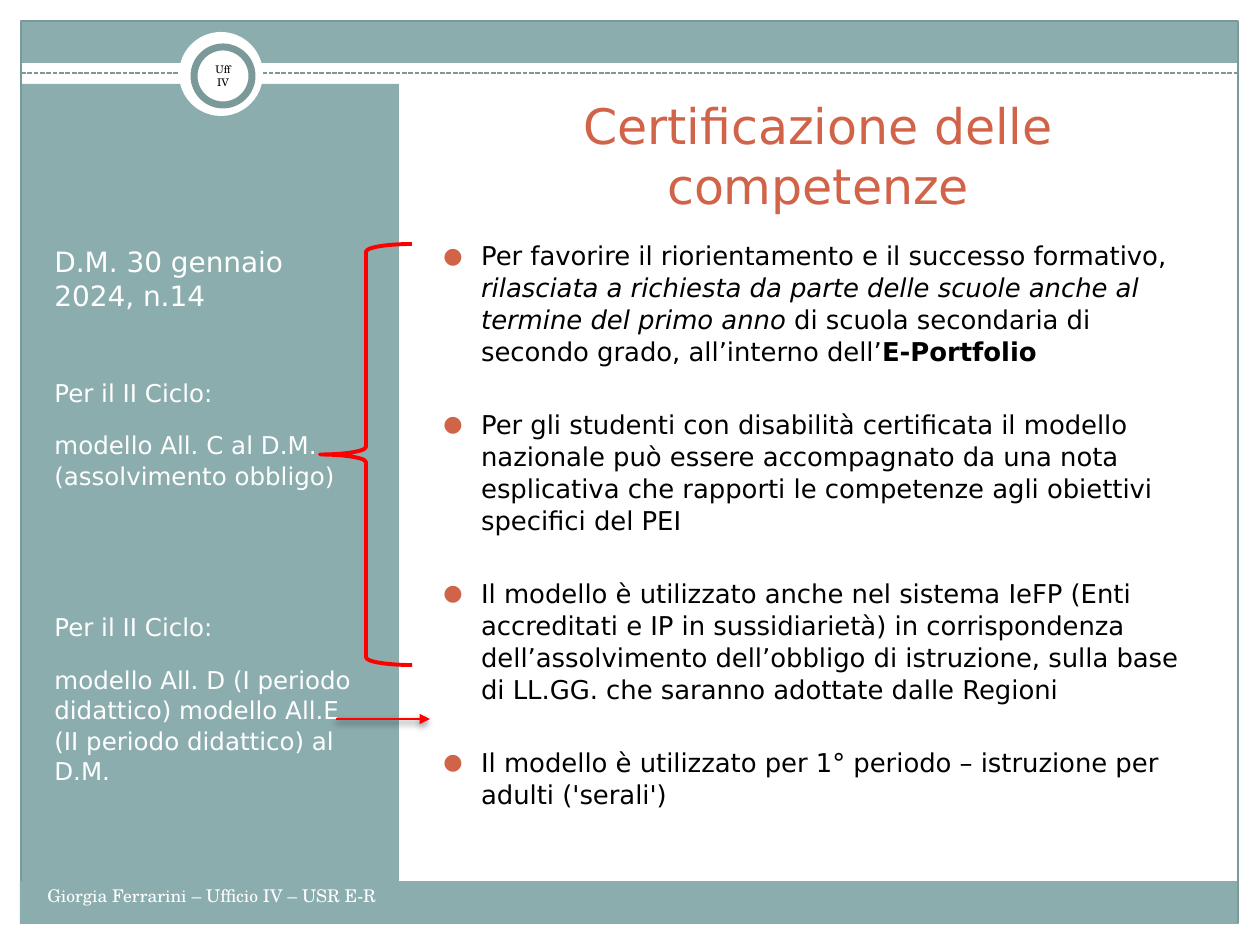
from dataclasses import dataclass

from lxml import etree
from pptx import Presentation
from pptx import util as u
from pptx.dml.color import RGBColor
from pptx.enum import dml, shapes, text
from pptx.oxml import ns


@dataclass(frozen=True)
class Theme:
    sage: str = "8CADAE"
    edge: str = "7C999A"
    rust: str = "D16349"
    red: str = "FF0000"
    white: str = "FFFFFF"
    black: str = "000000"
    sans: str = "DejaVu Sans"
    serif: str = "TeX Gyre Schola"
    title: float = 28
    lead: float = 16
    side: float = 14
    body: float = 14.8
    foot: float = 10
    badge: float = 6
    lines: float = 1.03


T = Theme()
PX = 914400 / 126
WIDE, HIGH = 1260, 945

TITLE = "Certificazione delle competenze"
BADGE = "Uff IV"
FOOT = "Giorgia Ferrarini – Ufficio IV – USR E-R"

# text, size, space before, space after
SIDE = [
    ("D.M. 30 gennaio 2024, n.14", T.lead, 0, 10),
    ("Per il II Ciclo:", T.side, 26.8, 10),
    ("modello All. C al D.M. (assolvimento obbligo)", T.side, 2.8, 10),
    ("Per il II Ciclo:", T.side, 59.5, 10),
    ("modello All. D (I periodo didattico) modello All.E "
     "(II periodo didattico) al D.M.", T.side, 2.8, 10),
]

# each point is a list of (text, style)
POINTS = [
    [("Per favorire il riorientamento e il successo formativo, ", ""),
     ("rilasciata a richiesta\u00a0da parte delle scuole\u00a0anche al "
      "termine del primo anno", "i"),
     (" di scuola secondaria di secondo grado, all’interno dell’", ""),
     ("E-Portfolio", "b")],
    [("Per gli studenti con disabilità certificata il modello nazionale può "
      "essere accompagnato da una nota esplicativa che rapporti\u00a0le "
      "competenze agli obiettivi specifici del PEI", "")],
    [("Il modello è utilizzato anche nel sistema IeFP (Enti accreditati "
      "e\u00a0IP in sussidiarietà) in corrispondenza dell’assolvimento "
      "dell’obbligo di istruzione, sulla base di LL.GG. che saranno adottate "
      "dalle Regioni", "")],
    [("Il modello è utilizzato\u00a0per 1° periodo – istruzione per adulti "
      "('serali')", "")],
]
GAP = 23.4

# box, fill
PANELS = [
    ((21, 21, 1217, 42), T.sage),
    ((0, 924, WIDE, 21), T.white),
    ((1239, 0, 21, HIGH), T.white),
    ((0, 0, WIDE, 16), T.white),
    ((0, 0, 21, HIGH), T.white),
    ((21, 84, 378, 809), T.sage),
]

prs = Presentation()
prs.slide_width, prs.slide_height = u.Inches(10), u.Inches(7.5)
slide = prs.slides.add_slide(prs.slide_layouts[6])
KIND = shapes.MSO_SHAPE


def px(*nums):
    return [u.Emu(round(n * PX)) for n in nums]


def rgb(code):
    return RGBColor.from_string(code)


def stroke(line, color, width):
    line.color.rgb = rgb(color)
    line.width = u.Pt(width)


def shape(kind, box, fill=None, edge=None, width=0.75):
    item = slide.shapes.add_shape(kind, *px(*box))
    item.shadow.inherit = False
    if fill:
        item.fill.solid()
        item.fill.fore_color.rgb = rgb(fill)
    else:
        item.fill.background()
    if edge:
        stroke(item.line, edge, width)
    else:
        item.line.fill.background()
    return item


def rule(start, end, color, width):
    line = slide.shapes.add_connector(
        shapes.MSO_CONNECTOR.STRAIGHT, *px(*start, *end))
    stroke(line.line, color, width)
    glow = etree.SubElement(line._element.spPr, ns.qn("a:effectLst"))
    return line, glow


def frame(box):
    tf = slide.shapes.add_textbox(*px(*box)).text_frame
    tf.word_wrap = True
    return tf


def paras(tf, count):
    return [tf.paragraphs[0]] + [tf.add_paragraph() for _ in range(count - 1)]


def style(item, face, size, color):
    font = item.font
    font.name, font.size = face, u.Pt(size)
    font.color.rgb = rgb(color)


def write(para, words, face, size, color):
    para.text = words
    style(para.runs[0], face, size, color)


def bullet(para):
    ppr = para._p.get_or_add_pPr()
    ppr.set("marL", str(u.Inches(0.3)))
    ppr.set("indent", str(-u.Inches(0.3)))
    tint = etree.SubElement(ppr, ns.qn("a:buClr"))
    etree.SubElement(tint, ns.qn("a:srgbClr"), val=T.rust)
    etree.SubElement(ppr, ns.qn("a:buSzPct"), val="85000")
    etree.SubElement(ppr, ns.qn("a:buFont"), typeface=T.sans)
    etree.SubElement(ppr, ns.qn("a:buChar"), char="●")


# Frame and badge
for box, fill in PANELS:
    shape(KIND.RECTANGLE, box, fill)
shape(KIND.RECTANGLE, (21, 21, 1217, 902), edge=T.edge)
dash, _ = rule((21, 73), (1239, 73), T.edge, 0.9)
dash.line.dash_style = dml.MSO_LINE.SQUARE_DOT
shape(KIND.OVAL, (179, 32, 84, 84), T.white)
shape(KIND.RECTANGLE, (20, 881, 1217, 43), T.sage)
badge = shape(KIND.OVAL, (194, 47, 58, 58), T.white, T.edge, 4).text_frame
badge.word_wrap = True
badge.margin_left = badge.margin_right = px(8)[0]
badge.margin_top = badge.margin_bottom = 0
badge.vertical_anchor = text.MSO_ANCHOR.MIDDLE
write(badge.paragraphs[0], BADGE, T.serif, T.badge, T.black)
badge.paragraphs[0].alignment = text.PP_ALIGN.CENTER

# Side column
tf = frame((42, 237, 325, 679))
for para, (words, size, above, below) in zip(paras(tf, len(SIDE)), SIDE):
    write(para, words, T.sans, size, T.white)
    para.line_spacing = T.lines
    para.space_before, para.space_after = u.Pt(above), u.Pt(below)

# Points
tf = frame((431, 233, 784, 539))
for num, (para, runs) in enumerate(zip(paras(tf, len(POINTS)), POINTS)):
    para.line_spacing = T.lines
    para.space_before = u.Pt(GAP if num else 0)
    bullet(para)
    for words, mark in runs:
        run = para.add_run()
        run.text = words
        style(run, T.sans, T.body, T.black)
        run.font.italic, run.font.bold = mark == "i", mark == "b"

# Title
tf = frame((426, 55, 784, 166))
tf.vertical_anchor = text.MSO_ANCHOR.BOTTOM
head = tf.paragraphs[0]
write(head, TITLE, T.sans, T.title, T.rust)
head.alignment = text.PP_ALIGN.CENTER
head.line_spacing = T.lines

# Links from the side column to the points
shape(KIND.LEFT_BRACE, (320, 244, 92, 421), edge=T.red, width=2.25)
arrow, glow = rule((336, 719), (430, 719), T.red, 1.57)
etree.SubElement(arrow.line._get_or_add_ln(), ns.qn("a:tailEnd"),
                 type="triangle")
shade = etree.SubElement(glow, ns.qn("a:outerShdw"), blurRad=str(u.Pt(4)),
                         dist=str(u.Pt(2)), dir="5400000", rotWithShape="0")
tint = etree.SubElement(shade, ns.qn("a:srgbClr"), val=T.black)
etree.SubElement(tint, ns.qn("a:alpha"), val="45000")

write(frame((35, 879, 430, 50)).paragraphs[0], FOOT, T.serif, T.foot, T.white)

prs.save("out.pptx")
